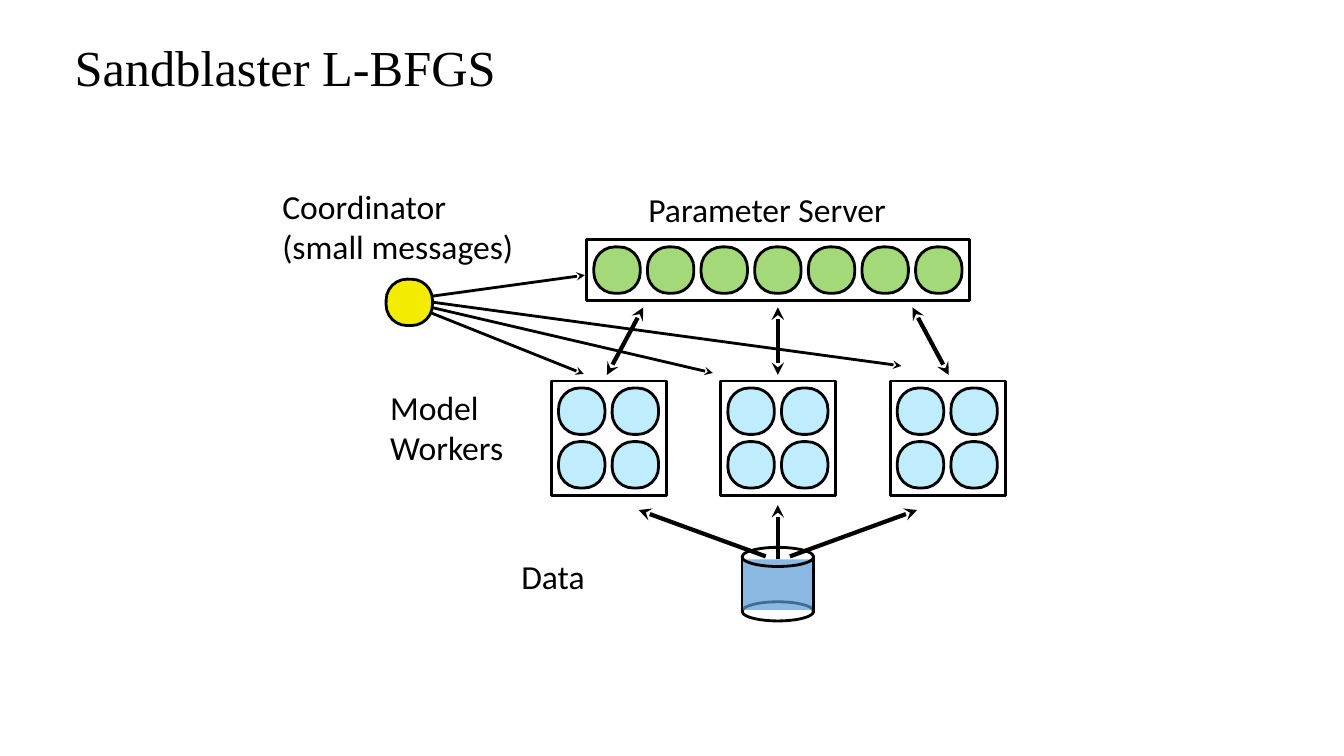
from dataclasses import dataclass

from lxml import etree
from pptx import Presentation
from pptx import util as u
from pptx.dml.color import RGBColor
from pptx.enum import shapes, text
from pptx.oxml import ns


@dataclass(frozen=True)
class Theme:
    ink: str = "000000"
    coordinator: str = "F3EB00"
    server: str = "A3D979"
    worker: str = "C0EDFE"
    data: str = "5B9BD5"
    title_font: str = "Times New Roman"
    body_font: str = "Calibri"
    title_size: int = 36
    body_size: int = 24
    thin: int = 2
    thick: int = 3


THEME = Theme()
NODE = 0.46
PITCH = 0.532
PADDING = 0.07


def format_text(frame, lines, font=THEME.body_font, size=THEME.body_size, spacing=None):
    frame.vertical_anchor = text.MSO_ANCHOR.MIDDLE
    for index, line in enumerate(lines):
        paragraph = frame.paragraphs[0] if index == 0 else frame.add_paragraph()
        paragraph.alignment = text.PP_ALIGN.LEFT
        paragraph.line_spacing = spacing
        run = paragraph.add_run()
        run.text = line
        run.font.name = font
        run.font.size = u.Pt(size)
        run.font.color.rgb = RGBColor.from_string(THEME.ink)


def add_label(slide, box, *lines, wrap=True):
    frame = slide.shapes.add_textbox(*map(u.Inches, box)).text_frame
    frame.margin_left = frame.margin_right = frame.margin_top = frame.margin_bottom = 0
    frame.word_wrap = wrap
    format_text(frame, lines)


def add_shape(slide, kind, box, fill=None, outline=True, alpha=None):
    shape = slide.shapes.add_shape(kind, *map(u.Inches, box))
    shape.shadow.inherit = False
    if fill:
        shape.fill.solid()
        shape.fill.fore_color.rgb = RGBColor.from_string(fill)
    else:
        shape.fill.background()
    if alpha:
        color = shape.fill._xPr.find(".//" + ns.qn("a:srgbClr"))
        etree.SubElement(color, ns.qn("a:alpha"), val=str(alpha * 1000))
    if outline:
        shape.line.color.rgb = RGBColor.from_string(THEME.ink)
        shape.line.width = u.Pt(THEME.thin)
    else:
        shape.line.fill.background()
    return shape


def add_node(slide, left, top, fill):
    node = add_shape(slide, shapes.MSO_SHAPE.ROUNDED_RECTANGLE, (left, top, NODE, NODE), fill)
    node.adjustments[0] = 0.452


def add_line(slide, start, end, width=THEME.thin, arrows=()):
    connector = slide.shapes.add_connector(
        shapes.MSO_CONNECTOR.STRAIGHT, *map(u.Inches, (*start, *end)))
    connector.line.color.rgb = RGBColor.from_string(THEME.ink)
    connector.line.width = u.Pt(width)
    for arrow in arrows:
        etree.SubElement(connector.line._get_or_add_ln(), ns.qn(f"a:{arrow}"), type="stealth")
    etree.SubElement(connector._element.spPr, ns.qn("a:effectLst"))


def add_title(slide, box, title):
    placeholder = slide.shapes.title
    placeholder.left, placeholder.top, placeholder.width, placeholder.height = map(u.Inches, box)
    format_text(placeholder.text_frame, [title], THEME.title_font, THEME.title_size, 0.9)


def add_node_grid(slide, box, columns, rows, fill):
    left, top = box[:2]
    for row in range(rows):
        for column in range(columns):
            add_node(slide, left + PADDING + column * PITCH, top + PADDING + row * PITCH, fill)
    add_shape(slide, shapes.MSO_SHAPE.RECTANGLE, box)


def add_parameter_server(slide, box):
    left, top = box[:2]
    add_label(slide, (left + 0.61, top - 0.56, 2.51, 0.5), "Parameter Server", wrap=False)
    add_node_grid(slide, box, 7, 1, THEME.server)


def add_model_workers(slide, box):
    left, top, width, height = box
    add_label(slide, (left - 1.6, top + 0.01, 1.44, 0.89), "Model", "Workers")
    step = (width - height) / 2
    for index in range(3):
        add_node_grid(slide, (left + index * step, top, height, height), 2, 2, THEME.worker)


def add_server_links(slide, box):
    left, top, width, height = box
    center = left + width / 2
    for upper, lower in ((left + 0.36, left), (center, center),
                         (left + width - 0.36, left + width)):
        add_line(slide, (upper, top), (lower, top + height), THEME.thick, ("headEnd", "tailEnd"))


def add_data_store(slide, box):
    left, top, width, height = box
    right, center, cap = left + width, left + width / 2, 0.19
    add_label(slide, (left - 2.19, top + 0.04, 2.25, 0.5), "Data")
    add_shape(slide, shapes.MSO_SHAPE.OVAL, (left, top + height - cap, width, cap))
    add_shape(slide, shapes.MSO_SHAPE.RECTANGLE, (left, top + 0.12, width, 0.5),
              THEME.data, outline=False, alpha=70)
    add_shape(slide, shapes.MSO_SHAPE.OVAL, (left, top, width, cap))
    for side in (left, right):
        add_line(slide, (side, top + 0.11), (side, top + 0.65))
    add_line(slide, (center, top + 0.12), (center, top - 0.42), THEME.thick, ("tailEnd",))
    for sign in (1, -1):
        add_line(slide, (center + sign * 0.12, top + 0.09), (center + sign * 1.38, top - 0.37),
                 THEME.thick, ("tailEnd",))


def add_coordinator(slide, box):
    left, top = box[:2]
    add_label(slide, (left - 1.03, top - 0.97, 2.51, 0.89), "Coordinator", "(small messages)")
    messages = (
        ((0.36, 0.3), (1.96, 0.94)),
        ((0.32, 0.25), (3.24, 0.93)),
        ((0.4, 0.22), (5.11, 0.86)),
        ((0.37, 0.18), (1.97, -0.04)),
    )
    for start, end in messages:
        add_line(slide, (left + start[0], top + start[1]), (left + end[0], top + end[1]),
                 arrows=("tailEnd",))
    add_node(slide, left, top, THEME.coordinator)


def main():
    presentation = Presentation()
    presentation.slide_width = u.Inches(13.33)
    presentation.slide_height = u.Inches(7.5)
    slide = presentation.slides.add_slide(presentation.slide_layouts[5])
    add_title(slide, (0.64, -0.03, 11.5, 1.45), "Sandblaster L-BFGS")
    add_model_workers(slide, (5.47, 3.78, 4.5, 1.14))
    add_parameter_server(slide, (5.82, 2.38, 3.8, 0.6))
    add_server_links(slide, (6.02, 3.05, 3.39, 0.67))
    add_data_store(slide, (7.36, 5.43, 0.71, 0.73))
    add_coordinator(slide, (3.83, 2.77, NODE, NODE))
    presentation.save("out.pptx")


if __name__ == "__main__":
    main()
